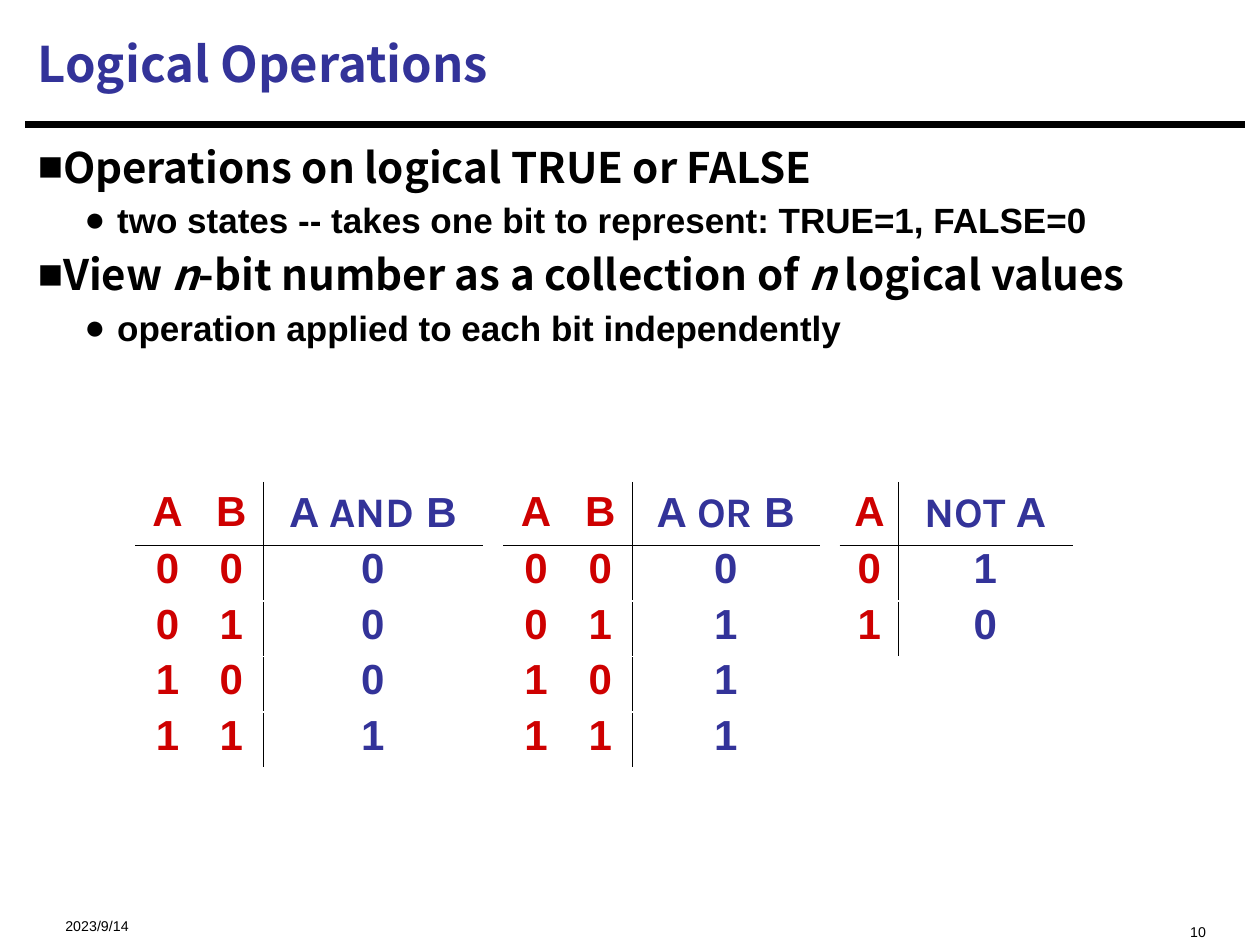
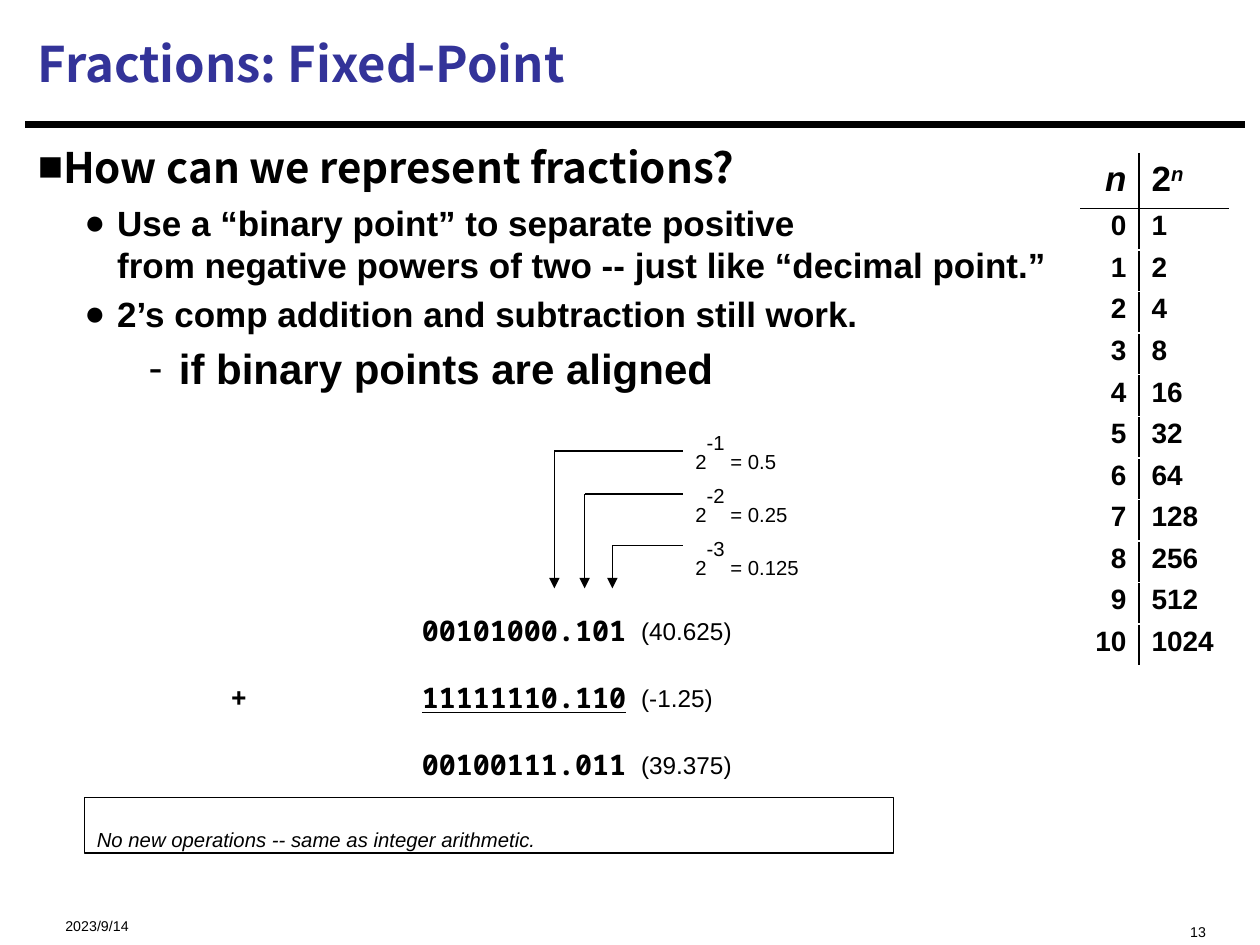
from pptx import Presentation
from pptx import util as u
from pptx.dml.color import RGBColor
from pptx.enum import shapes, text
from pptx.oxml import ns
from lxml import etree

Inches, Pt = u.Inches, u.Pt
BLACK = RGBColor(0x00, 0x00, 0x00)
BLUE = RGBColor(0x33, 0x33, 0x99)
RED = RGBColor(0xCE, 0x00, 0x00)
BODY, HEADING, CODE, OPERATOR = "Arial", "Noto Sans CJK SC", "Noto Sans Mono", "Karla"
LOWERED, RAISED = -25000, 30000  # text offsets, in thousandths of a percent
LEFT, CENTER, RIGHT = text.PP_ALIGN.LEFT, text.PP_ALIGN.CENTER, text.PP_ALIGN.RIGHT
TOP, MIDDLE = text.MSO_ANCHOR.TOP, text.MSO_ANCHOR.MIDDLE

# Bullet, left margin, hanging indent, font and size of each list level
LEVELS = [
    ("■", 0, 0, HEADING, 24),
    ("●", 0.63, -0.26, BODY, 20),
    ("-", 1.12, -0.24, BODY, 24),
]


# Text and XML helpers
def sub(parent, tag, **attributes):
    child = etree.SubElement(parent, ns.qn(tag))
    for name, value in attributes.items():
        child.set(name, str(value))
    return child


def write(paragraph, *parts, align=LEFT, gap=False, spacing=None, **style):
    """Add runs; each part is a string or a (string, overrides) pair."""
    paragraph.alignment = align
    paragraph.line_spacing = spacing
    if gap:
        paragraph.space_before = Pt(0)
        before = paragraph._p.pPr.find(ns.qn("a:spcBef"))
        before.clear()
        sub(before, "a:spcPct", val=20000)
    for part in parts:
        words, changes = (part, {}) if isinstance(part, str) else part
        look = {**style, **changes}
        for i, line in enumerate(words.split("\n")):
            if i:
                paragraph.add_line_break()
            run = paragraph.add_run()
            run.text = line
            font = run.font
            font.name = look.get("font", BODY)
            font.size = Pt(look["size"])
            font.color.rgb = look.get("color", BLACK)
            font.bold = look.get("bold", False)
            font.italic = look.get("italic", False)
            font.underline = look.get("underline", False)
            if look.get("offset"):
                run._r.get_or_add_rPr().set("baseline", str(look["offset"]))


def place(shape, box):
    shape.left, shape.top, shape.width, shape.height = map(Inches, box)


def text_box(parent, box, *parts, anchor=TOP, wrap=True, **style):
    frame = parent.add_textbox(*map(Inches, box)).text_frame
    frame.word_wrap = wrap
    frame.vertical_anchor = anchor
    write(frame.paragraphs[0], *parts, **style)
    return frame


def line(parent, start, end, width, arrow=False):
    connector = parent.add_connector(
        shapes.MSO_CONNECTOR.STRAIGHT, *map(Inches, (*start, *end)))
    connector.line.color.rgb = BLACK
    connector.line.width = Pt(width)
    properties = connector.element.spPr
    if arrow:
        sub(properties.find(ns.qn("a:ln")), "a:tailEnd", type="triangle")
    sub(properties, "a:effectLst")
    return connector


# Frame shared by the slides
def add_bullets(body, items):
    place(body, (0.2, 1.07, 9.67, 5.99))
    frame = body.text_frame
    frame.auto_size = text.MSO_AUTO_SIZE.NONE
    for i, (level, *parts) in enumerate(items):
        bullet, margin, indent, font, size = LEVELS[level]
        paragraph = frame.add_paragraph() if i else frame.paragraphs[0]
        paragraph.level = level
        write(paragraph, *parts, gap=True, spacing=Pt(1.2 * size),
              font=font, size=size, bold=True)
        properties = paragraph._p.pPr
        properties.set("marL", str(Inches(margin)))
        properties.set("indent", str(Inches(indent)))
        sub(properties, "a:buFont", typeface=BODY)
        sub(properties, "a:buChar", char=bullet)


def content_slide(deck, heading, number, items):
    slide = deck.slides.add_slide(deck.slide_layouts[1])
    title = slide.shapes.title
    place(title, (0.2, 0.08, 9.67, 0.84))
    title.text_frame.auto_size = text.MSO_AUTO_SIZE.NONE
    title.text_frame.vertical_anchor = MIDDLE
    write(title.text_frame.paragraphs[0], heading,
          font=HEADING, size=28, color=BLUE, bold=True)
    add_bullets(slide.placeholders[1], items)
    text_box(slide.shapes, (0.42, 7.15, 2.5, 0.27), "2023/9/14",
             anchor=MIDDLE, size=14, offset=LOWERED)
    text_box(slide.shapes, (6.67, 7.15, 3, 0.27), number,
             align=RIGHT, size=14, offset=LOWERED)
    return slide


def add_title_rule(slide):
    """Draw the rule once and move it to the layout of the slides."""
    rule = line(slide.shapes, (0.2, 0.99), (9.88, 0.99), 3.75)
    slide.slide_layout.shapes.element.append(rule.element)


# Tables
def add_border(cell, side):
    edge = etree.Element(ns.qn("a:" + side), w=str(Pt(1)))
    sub(sub(edge, "a:solidFill"), "a:srgbClr", val=BLACK)
    properties = cell._tc.get_or_add_tcPr()
    borders = [child for child in properties if child.tag.startswith(ns.qn("a:ln"))]
    properties.insert(len(borders), edge)


def ruled_table(slide, left, top, widths, heights, rows, styles, head_size, size):
    """Table with a rule under its head and one before its last column."""
    table = slide.shapes.add_table(
        len(rows), len(widths), Inches(left), Inches(top),
        Inches(sum(widths)), Inches(heights[0] + heights[1] * (len(rows) - 1))).table
    table.first_row = table.horz_banding = False
    for column, width in zip(table.columns, widths):
        column.width = Inches(width)
    last = len(widths) - 1
    for r, row in enumerate(rows):
        table.rows[r].height = Inches(heights[min(r, 1)])
        for c, parts in enumerate(row):
            cell = table.cell(r, c)
            cell.fill.background()
            write(cell.text_frame.paragraphs[0], *parts, gap=True, bold=True,
                  size=size if r else head_size, spacing=0.85 if r else None, **styles[c])
            # Sides in schema order: left, right, top, bottom
            for side, ruled in (("lnL", c == last), ("lnR", c == last - 1),
                                ("lnT", r == 1), ("lnB", r == 0)):
                if ruled:
                    add_border(cell, side)


def truth_table(slide, left, widths, result, inputs, operation):
    names = "AB"[:len(inputs[0])]
    rows = [[[name] for name in names] + [result]]
    rows += [[[str(bit)] for bit in (*bits, operation(*bits))] for bits in inputs]
    styles = [{"color": RED, "align": CENTER}] * len(names)
    styles += [{"color": BLUE, "align": CENTER}]
    ruled_table(slide, left, 3.83, widths, (0.5, 0.44), rows, styles, 24, 24)


def powers_table(slide, left, top):
    rows = [[[("n", {"italic": True})],
             ["2", ("n", {"italic": True, "offset": RAISED})]]]
    rows += [[[str(n)], [str(2 ** n)]] for n in range(11)]
    ruled_table(slide, left, top, (0.46, 0.71), (0.43, 0.33), rows,
                [{"align": RIGHT}, {"align": LEFT}], 20, 16)


# Fixed-point example
def place_values(slide, left, top):
    """Arrows from the fraction digits to their values."""
    group = slide.shapes.add_group_shape().shapes
    label_x, arrow_end = left + 1.02, top + 1.34
    bends = [(0, 0.25), (0.24, 0.59), (0.46, 1)]
    for i, (x, y) in enumerate(bends):
        power = i + 1
        text_box(group, (label_x, top + 0.42 * i, 1.22 + 0.15 * i, 0.43),
                 "2", (f"-{power}", {"offset": RAISED}), f" = {0.5 ** power}",
                 wrap=False, gap=True, size=20, offset=LOWERED)
        corner = (left + x, top + y)
        line(group, (label_x, top + y), corner, 0.75)
        line(group, corner, (left + x, arrow_end), 0.75, arrow=True)


def binary_sum(slide, left, top):
    terms = [("", "00101000.101", "(40.625)"),
             ("+", "11111110.110", "(-1.25)"),
             ("", "00100111.011", "(39.375)")]
    frame = slide.shapes.add_textbox(*map(Inches, (left, top, 7.83, 1.5))).text_frame
    frame.word_wrap = True
    for i, (sign, digits, value) in enumerate(terms):
        paragraph = frame.add_paragraph() if i else frame.paragraphs[0]
        write(paragraph, f"\t{sign}\t", (digits, {"underline": bool(sign)}), "\t",
              (value, {"font": BODY, "size": 24, "bold": False}),
              font=CODE, size=28, bold=True, offset=LOWERED)
        stops = sub(paragraph._p.pPr, "a:tabLst")
        for stop in (0.48, 2, 3.74):
            sub(stops, "a:tab", pos=Inches(stop), algn="l")


def note_box(slide, box):
    note = slide.shapes.add_shape(shapes.MSO_SHAPE.RECTANGLE, *map(Inches, box))
    note.shadow.inherit = False
    note.fill.background()
    note.line.color.rgb = BLACK
    note.line.width = Pt(0.75)
    note.text_frame.word_wrap = True
    note.text_frame.vertical_anchor = TOP
    write(note.text_frame.paragraphs[0], "No new operations -- same as integer arithmetic.",
          size=20, italic=True, offset=LOWERED)


# Slides
def logical_operations(deck):
    n = ("n", {"italic": True})
    slide = content_slide(deck, "Logical Operations", "10", [
        (0, "Operations on logical TRUE or FALSE"),
        (1, "two states -- takes one bit to represent: TRUE=1, FALSE=0"),
        (0, "View ", n, "-bit number as a collection of ", n, " logical values"),
        (1, "operation applied to each bit independently"),
    ])
    add_title_rule(slide)
    operator = {"font": OPERATOR}
    pairs = [(a, b) for a in (0, 1) for b in (0, 1)]
    truth_table(slide, 1.08, (0.5, 0.51, 1.74), ["A ", ("AND", operator), " B"],
                pairs, lambda a, b: a & b)
    truth_table(slide, 4, (0.51, 0.51, 1.48), ["A ", ("OR", operator), " B"],
                pairs, lambda a, b: a | b)
    truth_table(slide, 6.67, (0.46, 1.38), [("NOT", operator), " A"],
                [(0,), (1,)], lambda a: 1 - a)


def fixed_point(deck):
    slide = content_slide(deck, "Fractions: Fixed-Point", "13", [
        (0, "How can we represent fractions?"),
        (1, "Use a “binary point” to separate positive\n"
            "from negative powers of two -- just like “decimal point.”"),
        (1, "2’s comp addition and subtraction still work."),
        (2, "if binary points are aligned"),
    ])
    place_values(slide, 4.4, 3.33)
    note_box(slide, (0.67, 6.33, 6.42, 0.44))
    powers_table(slide, 8.58, 1.22)
    binary_sum(slide, 1.25, 4.56)


def main():
    deck = Presentation()
    deck.slide_width, deck.slide_height = Inches(10), Inches(7.5)
    logical_operations(deck)
    fixed_point(deck)
    deck.save("out.pptx")


if __name__ == "__main__":
    main()
